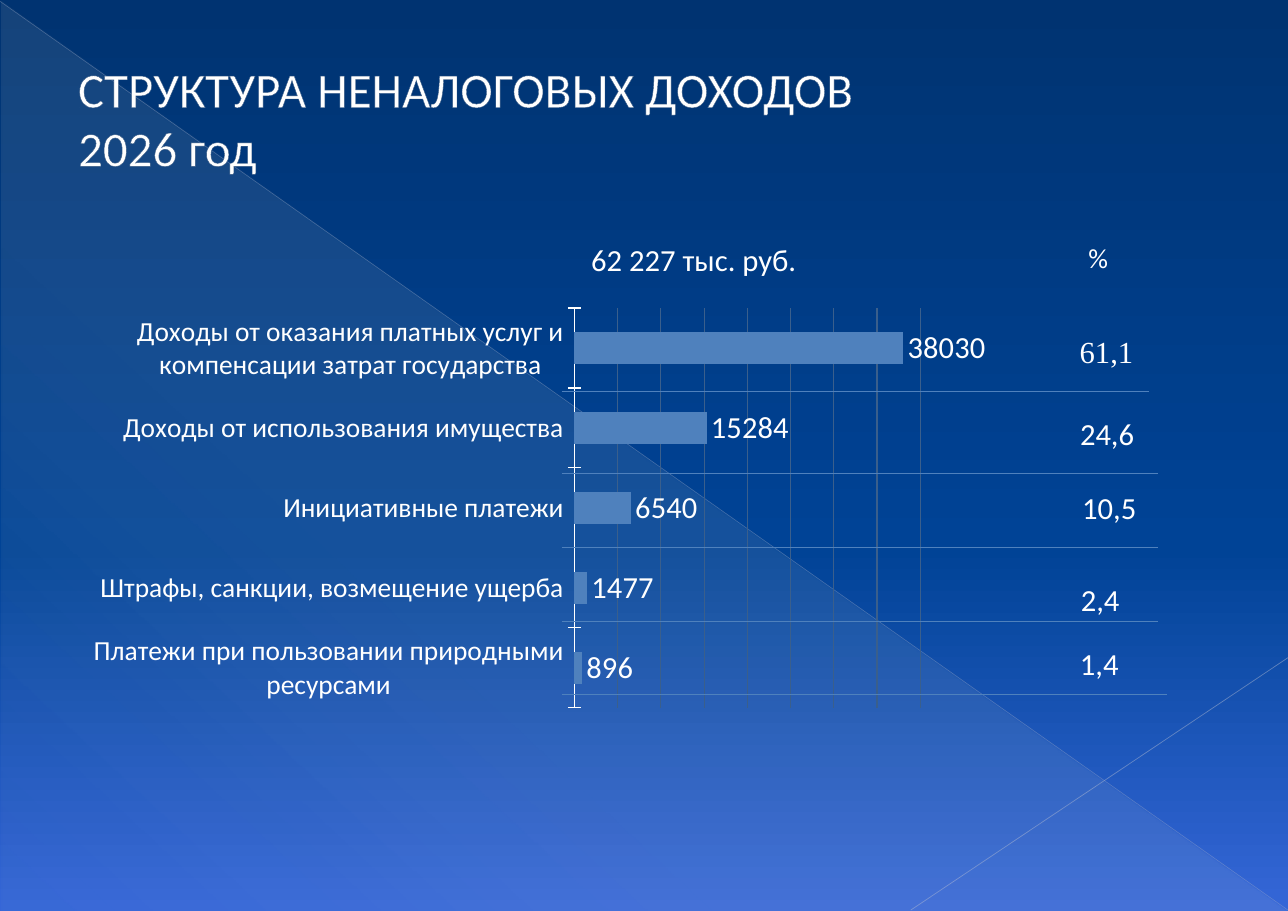
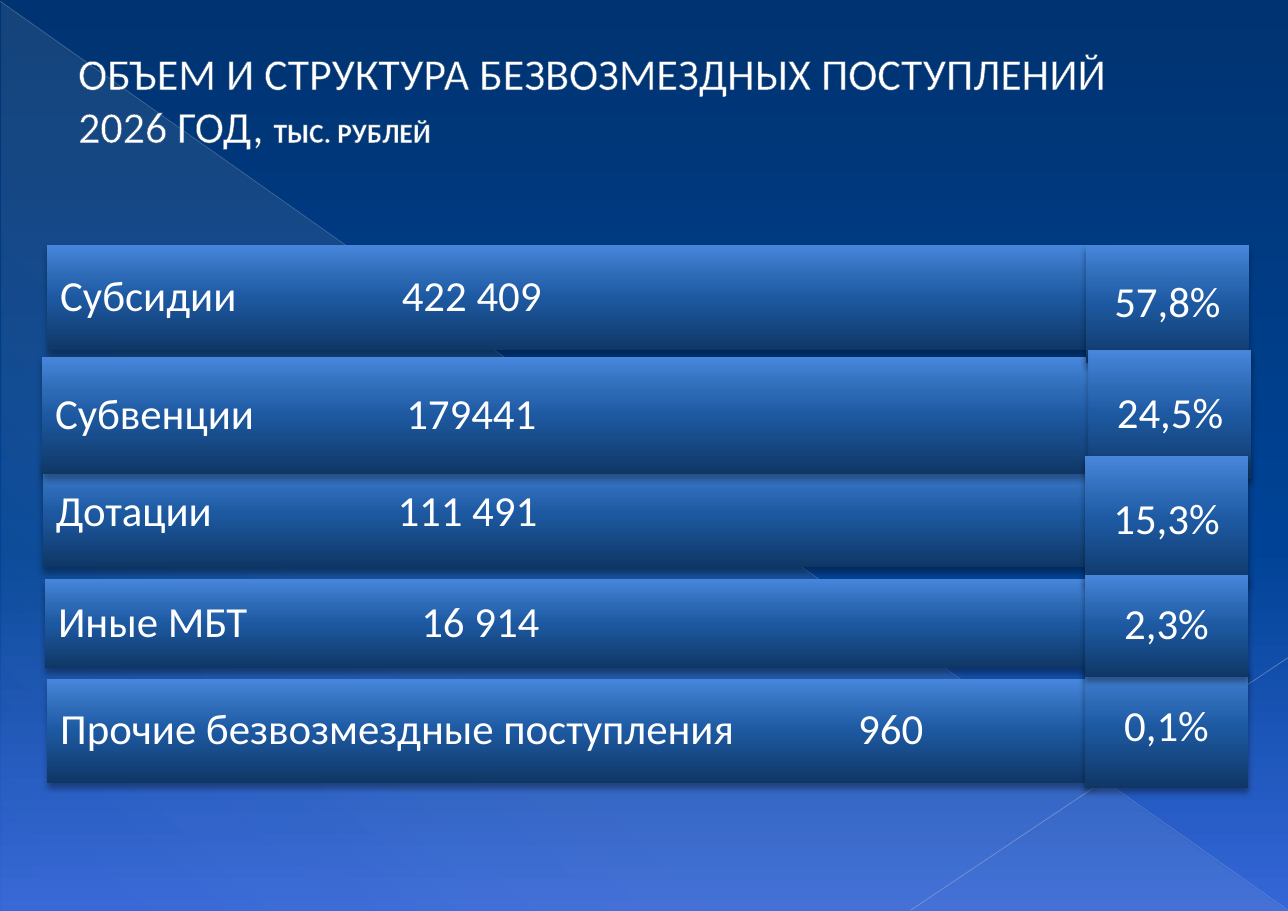
from pptx import Presentation
from pptx.chart.data import CategoryChartData as ChartData
from pptx.dml.color import RGBColor
from pptx.enum.chart import XL_CHART_TYPE as ChartType, XL_LABEL_POSITION as LabelPosition
from pptx.enum.chart import XL_TICK_MARK as TickMark
from pptx.enum.shapes import MSO_CONNECTOR as Connector, MSO_SHAPE as Preset
from pptx.enum.text import MSO_ANCHOR as Anchor, MSO_AUTO_SIZE as AutoSize, PP_ALIGN as Align
from pptx.oxml import parse_xml
from pptx.oxml.ns import nsdecls, qn
from pptx.util import Cm, Pt

WHITE = "FFFFFF"
ACCENT = "4F81BD"
GRID = "3A5F8C"
FONT = "Calibri"
SKY = [(0, "003371", 100), (60, "004396", 100), (100, "3566D7", 100)]
VEIL = [(0, "EEECE1", 10), (70, "EEECE1", 8), (100, "EEECE1", 1)]
STEEL = [(0, "0F3766", 100), (50, "1D59A1", 100), (70, "2D6AB6", 100), (100, "4786DB", 100)]


def color(code):
    return RGBColor.from_string(code)


def assign(target, values):
    for name, value in values.items():
        setattr(target, name, value)


def style_font(font, size, name=FONT, bold=False):
    assign(font, {"size": Pt(size), "name": name, "bold": bold})
    font.color.rgb = color(WHITE)


def set_gradient(fill, owner, stops, angle):
    fill.gradient()
    gradient = owner.xpath(".//a:gradFill")[0]
    marks = "".join(
        f'<a:gs pos="{position * 1000}"><a:srgbClr val="{code}">'
        f'<a:alpha val="{opacity * 1000}"/></a:srgbClr></a:gs>'
        for position, code, opacity in stops
    )
    stop_list = parse_xml(f'<a:gsLst {nsdecls("a")}>{marks}</a:gsLst>')
    gradient.replace(gradient.find(qn("a:gsLst")), stop_list)
    gradient.find(qn("a:lin")).set("ang", str(angle * 60000))


class Deck:
    def __init__(self):
        self.show = Presentation()
        assign(self.show, {"slide_width": Cm(29.7), "slide_height": Cm(21)})
        self.page = None

    def new_page(self):
        self.page = self.show.slides.add_slide(self.show.slide_layouts[5])

    def build_master(self):
        master = self.show.slide_master
        set_gradient(master.background.fill, master._element.cSld, SKY, 90)
        decorations = [
            self.panel(Preset.RIGHT_TRIANGLE, (0.03, 0.05, 29.67, 20.95), VEIL, 133),
            self.line((0, 0.03), (29.7, 20.98), "ADB6CE", 0.39, 35),
            self.line((29.7, 15.16), (21, 20.98), "B6BED3", 0.47, 45),
        ]
        for index, item in enumerate(decorations):
            element = item._element
            element.xpath(".//p:cNvPr")[0].set("id", str(101 + index))
            master.shapes._spTree.insert(2 + index, element)

    def title(self, top, lines):
        box = self.page.shapes.title
        place = {"left": 0, "top": Cm(top), "width": Cm(26.75), "height": Cm(4.29)}
        assign(box, place)
        frame = box.text_frame
        assign(frame, {
            "word_wrap": True, "auto_size": AutoSize.NONE, "vertical_anchor": Anchor.MIDDLE,
            "margin_left": Cm(0.28), "margin_right": Cm(0.28),
            "margin_top": Cm(0.15), "margin_bottom": Cm(0.15),
        })
        para = frame.paragraphs[0]
        para.alignment = Align.LEFT
        indent = para._p.get_or_add_pPr()
        indent.set("marL", str(Cm(1.52)))
        indent.set("indent", "0")
        for index, spans in enumerate(lines):
            if index:
                para.add_line_break()
            for text, size, bold in spans:
                span = para.add_run()
                span.text = text
                style_font(span.font, size, bold=bold)
                span.font._element.insert(0, parse_xml(
                    f'<a:ln {nsdecls("a")} w="{Pt(0.5)}"><a:solidFill>'
                    '<a:srgbClr val="375983"/></a:solidFill></a:ln>'))

    def label(self, left, top, width, text, size=20, font=FONT):
        box = self.page.shapes.add_textbox(Cm(left), Cm(top), Cm(width), Cm(1.12))
        frame = box.text_frame
        assign(frame, {"word_wrap": False, "auto_size": AutoSize.SHAPE_TO_FIT_TEXT})
        para = frame.paragraphs[0]
        para.alignment = Align.CENTER
        span = para.add_run()
        span.text = text
        style_font(span.font, size, font)

    def line(self, start, end, code, width, opacity=100):
        points = [Cm(value) for value in (*start, *end)]
        line = self.page.shapes.add_connector(Connector.STRAIGHT, *points)
        line.line.width = Pt(width)
        line.line.color.rgb = color(code)
        properties = line._element.spPr
        if opacity < 100:
            tone = properties.xpath(".//a:srgbClr")[0]
            tone.append(parse_xml(f'<a:alpha {nsdecls("a")} val="{opacity * 1000}"/>'))
        properties.append(parse_xml(f'<a:effectLst {nsdecls("a")}/>'))
        return line

    def panel(self, preset, place, stops, angle):
        shape = self.page.shapes.add_shape(preset, *(Cm(value) for value in place))
        set_gradient(shape.fill, shape._element.spPr, stops, angle)
        shape.line.fill.background()
        shape.shadow.inherit = False
        return shape

    def plate(self, place, text, align=Align.LEFT, tab=None):
        shape = self.panel(Preset.RECTANGLE, place, STEEL, 270)
        shape._element.spPr.find(qn("a:effectLst")).append(parse_xml(
            f'<a:outerShdw {nsdecls("a")} blurRad="{Pt(4)}" dist="{Pt(3)}" dir="5400000" '
            'rotWithShape="0"><a:srgbClr val="000000"><a:alpha val="35000"/>'
            '</a:srgbClr></a:outerShdw>'))
        frame = shape.text_frame
        assign(frame, {"word_wrap": True, "vertical_anchor": Anchor.MIDDLE})
        assign(frame, {f"margin_{side}": Cm(0.3) for side in ("left", "right", "top", "bottom")})
        para = frame.paragraphs[0]
        assign(para, {"alignment": align, "line_spacing": 0.9})
        if tab:
            para._p.get_or_add_pPr().append(parse_xml(
                f'<a:tabLst {nsdecls("a")}><a:tab pos="{Cm(tab)}" algn="r"/></a:tabLst>'))
        span = para.add_run()
        span.text = text
        style_font(span.font, 28)

    def bar_chart(self, place, categories, values):
        data = ChartData(number_format="0")
        data.categories = categories
        data.add_series("Series 1", values)
        chart = self.page.shapes.add_chart(
            ChartType.BAR_CLUSTERED, *(Cm(value) for value in place), data).chart
        assign(chart, {"has_legend": False, "has_title": False})
        style_font(chart.font, 16)

        names = chart.category_axis
        assign(names, {"major_tick_mark": TickMark.CROSS, "minor_tick_mark": TickMark.NONE})
        style_font(names.tick_labels.font, 18)
        names.format.line.color.rgb = color(WHITE)
        names.format.line.width = Pt(0.75)

        scale = chart.value_axis
        assign(scale, {"minimum_scale": 0, "maximum_scale": 40000, "major_unit": 5000,
                       "has_major_gridlines": True, "visible": False})
        grid = scale.major_gridlines.format.line
        grid.color.rgb = color(GRID)
        grid.width = Pt(0.75)

        plot = chart.plots[0]
        assign(plot, {"gap_width": 150, "vary_by_categories": False, "has_data_labels": True})
        fill = plot.series[0].format.fill
        fill.solid()
        fill.fore_color.rgb = color(ACCENT)
        labels = plot.data_labels
        assign(labels, {"show_value": True, "number_format": "0",
                        "number_format_is_linked": False,
                        "position": LabelPosition.OUTSIDE_END})
        style_font(labels.font, 20)

        area = chart._chartSpace.chart.plotArea
        for layout in area.findall(qn("c:layout")):
            area.remove(layout)
        bounds = {"x": 0.54, "y": 0.02, "w": 0.39, "h": 0.96}
        modes = '<c:layoutTarget val="inner"/><c:xMode val="edge"/><c:yMode val="edge"/>'
        sizes = "".join(f'<c:{key} val="{value}"/>' for key, value in bounds.items())
        area.insert(0, parse_xml(
            f'<c:layout {nsdecls("c")}><c:manualLayout>{modes}{sizes}'
            '</c:manualLayout></c:layout>'))


def build_non_tax_income(deck):
    deck.title(0.56, [[("СТРУКТУРА НЕНАЛОГОВЫХ ДОХОДОВ", 32, False)],
                      [("2026 год", 32, False)]])
    income = {
        "Платежи при пользовании природными ресурсами": 896,
        "Штрафы, санкции, возмещение ущерба": 1477,
        "Инициативные платежи": 6540,
        "Доходы от использования имущества": 15284,
        "Доходы от оказания платных услуг и компенсации затрат государства": 38030,
    }
    deck.bar_chart((2.16, 6.91, 20.57, 9.6), list(income), list(income.values()))
    deck.label(13.36, 5.44, 5.28, "62 227 тыс. руб.")
    deck.label(24.84, 5.44, 0.97, "%", 18)
    shares = [
        (24.64, 7.54, 1.75, "61,1", "Times New Roman"),
        (24.64, 9.45, 1.78, "24,6", FONT),
        (24.69, 11.15, 1.78, "10,5", FONT),
        (24.66, 13.26, 1.42, "2,4", FONT),
        (24.64, 14.73, 1.42, "1,4", FONT),
    ]
    for left, top, width, text, font in shares:
        deck.label(left, top, width, text, font=font)
    for top, right in [(9.02, 26.5), (10.92, 26.7), (12.62, 26.7), (14.33, 26.7), (16, 26.92)]:
        deck.line((12.95, top), (right, top), ACCENT, 0.75)


def build_transfers(deck):
    deck.title(0.13, [[("ОБЪЕМ И СТРУКТУРА БЕЗВОЗМЕЗДНЫХ ПОСТУПЛЕНИЙ", 28.8, False)],
                      [("2026 ГОД, ", 28.8, False), ("ТЫС. РУБЛЕЙ", 18, True)]])
    transfers = [
        ("Субсидии", "422 409", (1.09, 5.64, 24.36, 2.44), 11.1),
        ("Дотации", "111 491", (0.99, 10.57, 24.21, 2.51), 11.1),
        ("Иные МБТ", "16 914", (1.04, 13.34, 24.16, 2.06), 11.1),
        ("Прочие безвозмездные поступления", "960", (1.09, 15.65, 24.1, 2.39), 19.9),
        ("Субвенции", "179441", (0.97, 8.23, 24.82, 2.69), 11.1),
    ]
    for name, amount, place, tab in transfers:
        deck.plate(place, f"{name}\t{amount}", tab=tab)
    shares = [
        ("57,8%", 25.04, 5.64, 2.74),
        ("24,5%", 25.1, 8.08, 2.97),
        ("15,3%", 25.02, 10.52, 2.97),
        ("0,1%", 25.02, 15.37, 2.79),
        ("2,3%", 25.02, 13.26, 2.34),
    ]
    for text, left, top, height in shares:
        deck.plate((left, top, 3.76, height), text, Align.CENTER)


def main():
    deck = Deck()
    deck.new_page()
    deck.build_master()
    build_non_tax_income(deck)
    deck.new_page()
    build_transfers(deck)
    deck.show.save("out.pptx")


if __name__ == "__main__":
    main()
